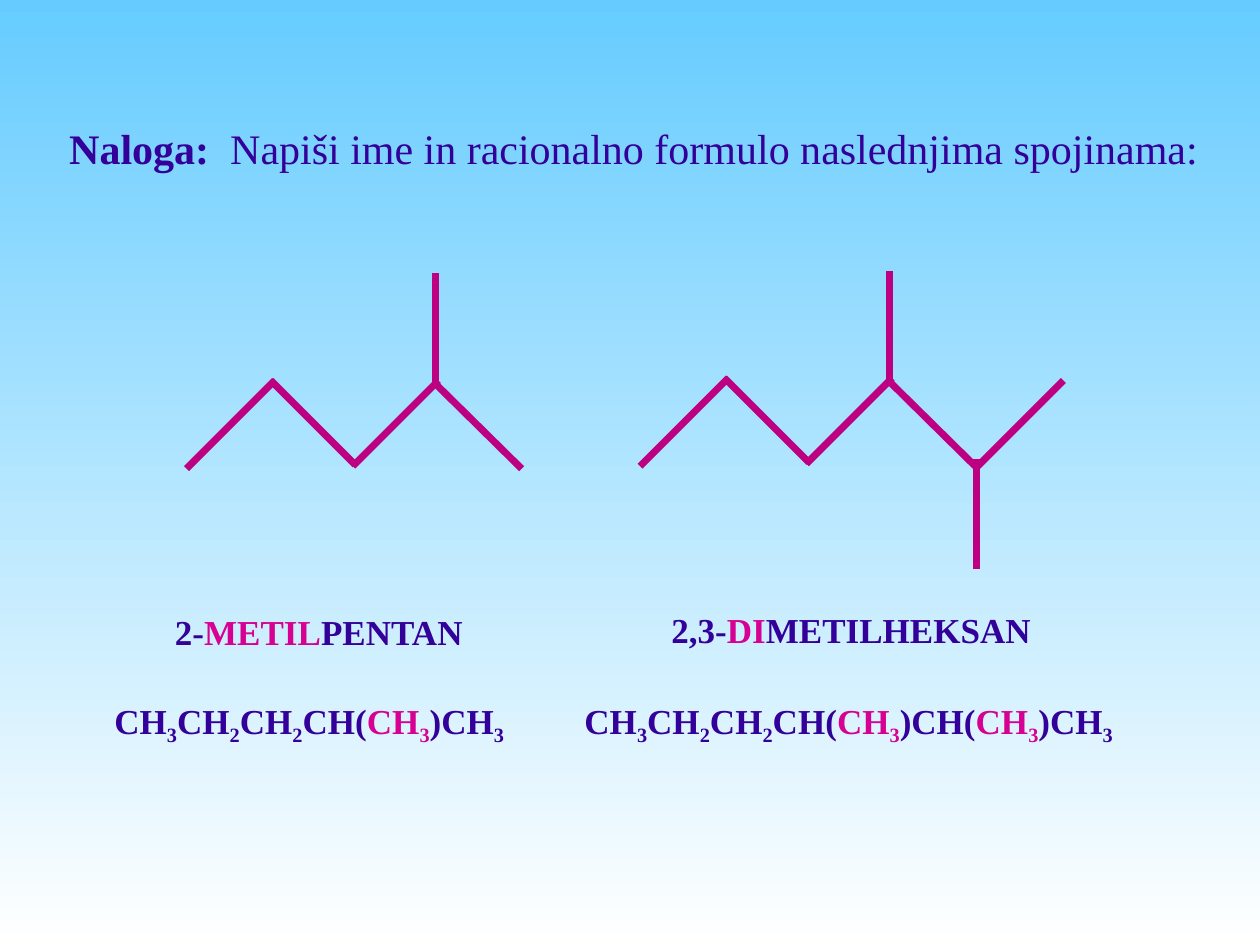
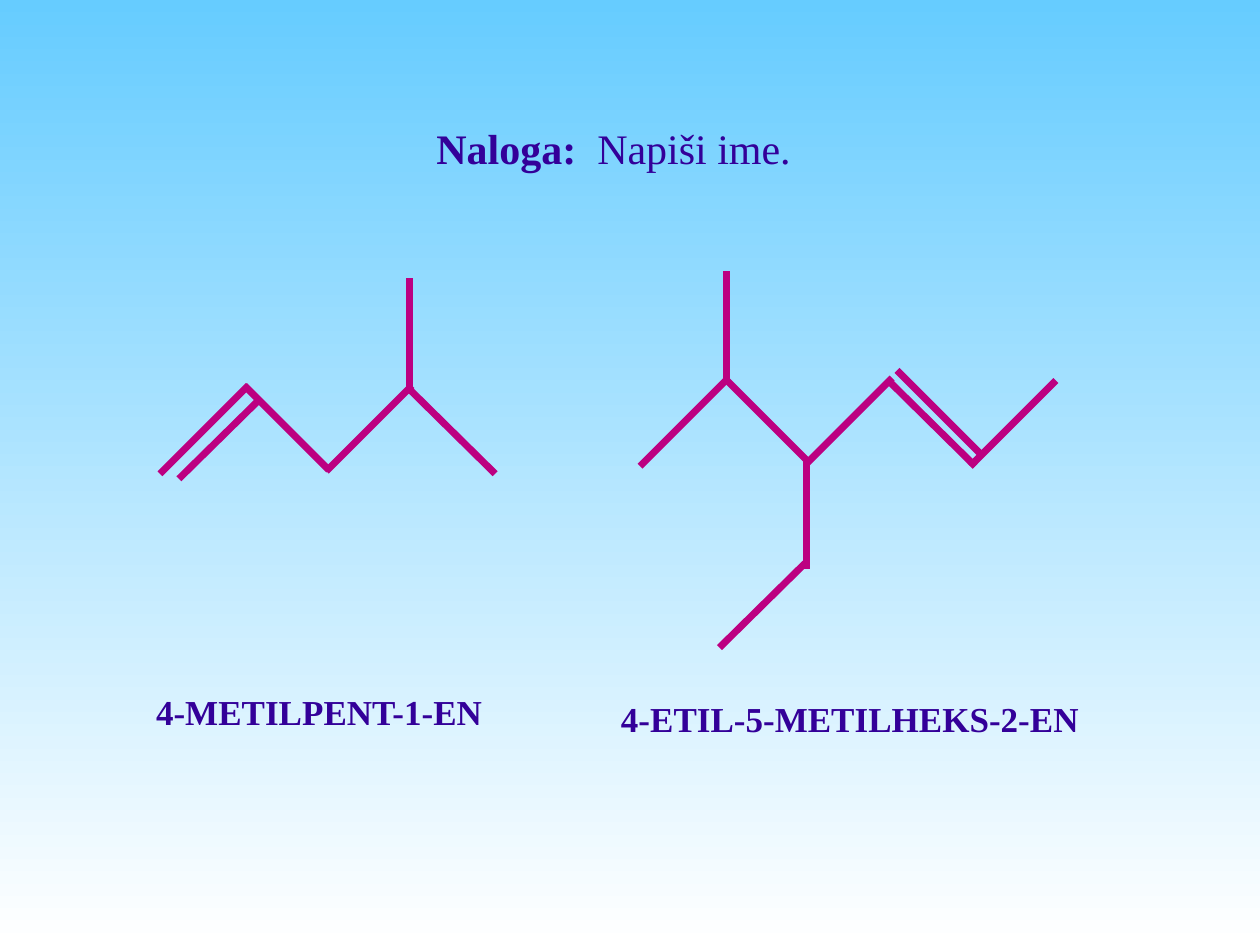
from dataclasses import dataclass
from itertools import groupby
from typing import NamedTuple

from lxml import etree
from pptx import Presentation
from pptx.dml.color import RGBColor
from pptx.enum.shapes import MSO_CONNECTOR
from pptx.enum.text import MSO_AUTO_SIZE, PP_ALIGN
from pptx.oxml.ns import qn
from pptx.presentation import Presentation as PresentationType
from pptx.slide import Slide
from pptx.util import Inches, Pt

STRAIGHT = MSO_CONNECTOR.STRAIGHT
FIT_SHAPE = MSO_AUTO_SIZE.SHAPE_TO_FIT_TEXT
LEFT, CENTER = PP_ALIGN.LEFT, PP_ALIGN.CENTER

SLIDE_WIDTH, SLIDE_HEIGHT = Inches(10), Inches(7.5)
COLUMN, ROW = SLIDE_WIDTH / 100, SLIDE_HEIGHT / 75
BLANK_LAYOUT = 6
MARK = "*"


@dataclass(frozen=True)
class Theme:
    font: str = "Times New Roman"
    title_size: int = 24
    label_size: int = 20
    bond_width: int = 4
    text: str = "330099"
    accent: str = "D60093"
    bond: str = "BC0081"
    sky_top: str = "66CCFF"
    sky_bottom: str = "FFFFFF"


THEME = Theme()


class Box(NamedTuple):
    column: float
    row: float
    columns: float
    rows: float = 4.4


class Bond(NamedTuple):
    """Start and end of a bond, in grid steps from the first carbon atom."""
    x1: float
    y1: float
    x2: float
    y2: float


class Label(NamedTuple):
    text: str
    box: Box
    wrap: bool = False
    formula: bool = False


@dataclass(frozen=True)
class Molecule:
    column: float
    row: float
    branches: tuple[Bond, ...]
    labels: tuple[Label, ...]


@dataclass(frozen=True)
class Task:
    title: str
    title_box: Box
    molecules: tuple[Molecule, ...]


def methyl_up(column: float) -> Bond:
    return Bond(column, -6.7, column, -15.5)


def bond_down(column: float) -> Bond:
    return Bond(column, -0.6, column, 8.2)


def rising_end(column: float) -> Bond:
    return Bond(column, 0, column + 6.8, -6.8)


ZIGZAG = (
    Bond(0, 0, 7, -7),
    Bond(6.7, -7, 13.4, -0.3),
    Bond(13.2, -0.2, 20, -7),
    Bond(19.7, -6.8, 26.6, 0),
)

TASKS = (
    Task(
        "*Naloga:  *Napiši ime in racionalno formulo naslednjima spojinama:",
        Box(4.1, 9.2, 92.4, 5.1),
        (
            Molecule(14.8, 37.2, (methyl_up(19.8),), (
                Label("2-*METIL*PENTAN", Box(12.9, 48, 25.1)),
                Label("CH3CH2CH2CH(*CH3*)CH3", Box(8.1, 55, 38.3),
                      wrap=True, formula=True),
            )),
            Molecule(50.8, 37, (methyl_up(19.8), bond_down(26.7), rising_end(26.8)), (
                Label("2,3-*DI*METILHEKSAN", Box(52.3, 47.8, 30.8)),
                Label("CH3CH2CH2CH(*CH3*)CH(*CH3*)CH3", Box(45.4, 55, 46.5),
                      wrap=True, formula=True),
            )),
        ),
    ),
    Task(
        "*Naloga:  *Napiši ime.",
        Box(33.5, 9.2, 30.4, 5.1),
        (
            Molecule(12.7, 37.6, (Bond(1.5, 0.4, 7.7, -5.7), methyl_up(19.8)), (
                Label("4-METILPENT-1-EN", Box(11.4, 54.3, 28.1)),
            )),
            Molecule(50.8, 37, (
                methyl_up(6.9),
                bond_down(13.2),
                rising_end(26.2),
                Bond(6.3, 14.4, 13.1, 7.7),
                Bond(20.4, -7.6, 27.1, -0.9),
            ), (
                Label("4-ETIL-5-METILHEKS-2-EN", Box(48.3, 54.9, 42.9), wrap=True),
            )),
        ),
    ),
)


def across(columns: float) -> int:
    return round(columns * COLUMN)


def down(rows: float) -> int:
    return round(rows * ROW)


def write(slide: Slide, text: str, box: Box, *, size: int, bold: bool = True,
          marked_color: str = THEME.text, align: PP_ALIGN = LEFT,
          wrap: bool = False, formula: bool = False) -> None:
    """Write text; parts between marks are bold and take the marked colour.

    In a formula, digits are set as subscripts.
    """
    shape = slide.shapes.add_textbox(across(box.column), down(box.row),
                                     across(box.columns), down(box.rows))
    frame = shape.text_frame
    frame.word_wrap = wrap
    frame.auto_size = FIT_SHAPE
    paragraph = frame.paragraphs[0]
    paragraph.alignment = align
    for index, part in enumerate(text.split(MARK)):
        marked = index % 2 == 1
        for is_digit, characters in groupby(part, str.isdigit if formula else bool):
            run = paragraph.add_run()
            run.text = "".join(characters)
            run.font.name = THEME.font
            run.font.size = Pt(size)
            run.font.bold = bold or marked
            color = marked_color if marked else THEME.text
            run.font.color.rgb = RGBColor.from_string(color)
            if formula and is_digit:
                run._r.get_or_add_rPr().set("baseline", "-25000")


def draw_molecule(slide: Slide, molecule: Molecule) -> None:
    group = slide.shapes.add_group_shape()
    for bond in ZIGZAG + molecule.branches:
        connector = group.shapes.add_connector(
            STRAIGHT,
            across(molecule.column + bond.x1), down(molecule.row + bond.y1),
            across(molecule.column + bond.x2), down(molecule.row + bond.y2))
        connector.line.color.rgb = RGBColor.from_string(THEME.bond)
        connector.line.width = Pt(THEME.bond_width)
        etree.SubElement(connector._element.spPr, qn("a:effectLst"))
    for label in molecule.labels:
        write(slide, label.text, label.box, size=THEME.label_size,
              marked_color=THEME.accent, wrap=label.wrap, formula=label.formula)


def paint_sky(slide: Slide) -> None:
    fill = slide.background.fill
    fill.gradient()
    fill.gradient_angle = 270
    colors = (THEME.sky_top, THEME.sky_bottom)
    for position, (stop, color) in enumerate(zip(fill.gradient_stops, colors)):
        stop.position = position
        stop.color.rgb = RGBColor.from_string(color)


def add_task(presentation: PresentationType, task: Task) -> None:
    slide = presentation.slides.add_slide(presentation.slide_layouts[BLANK_LAYOUT])
    paint_sky(slide)
    write(slide, task.title, task.title_box, size=THEME.title_size,
          bold=False, align=CENTER)
    for molecule in task.molecules:
        draw_molecule(slide, molecule)


def main() -> None:
    presentation = Presentation()
    presentation.slide_width = SLIDE_WIDTH
    presentation.slide_height = SLIDE_HEIGHT
    for task in TASKS:
        add_task(presentation, task)
    presentation.save("out.pptx")


if __name__ == "__main__":
    main()
